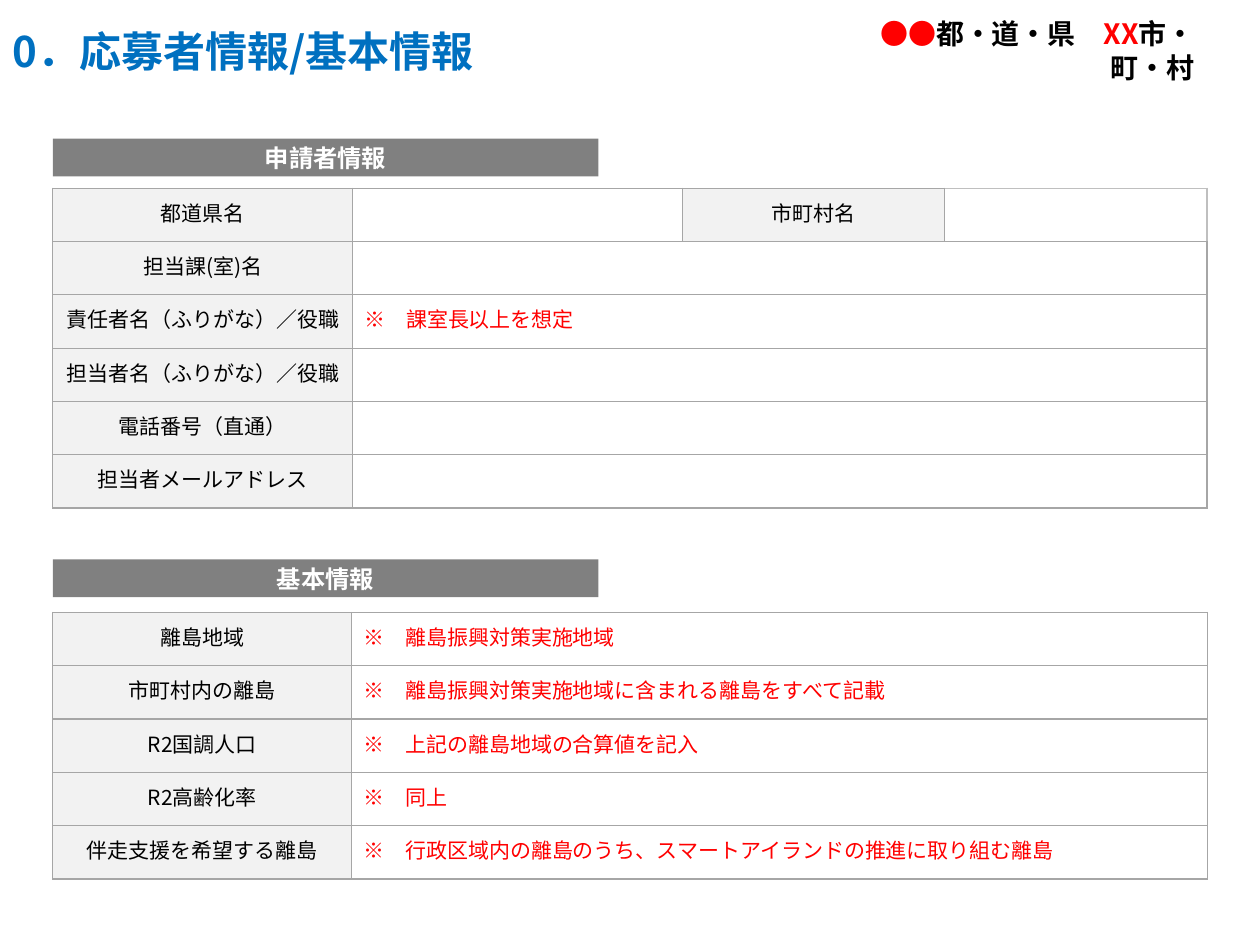
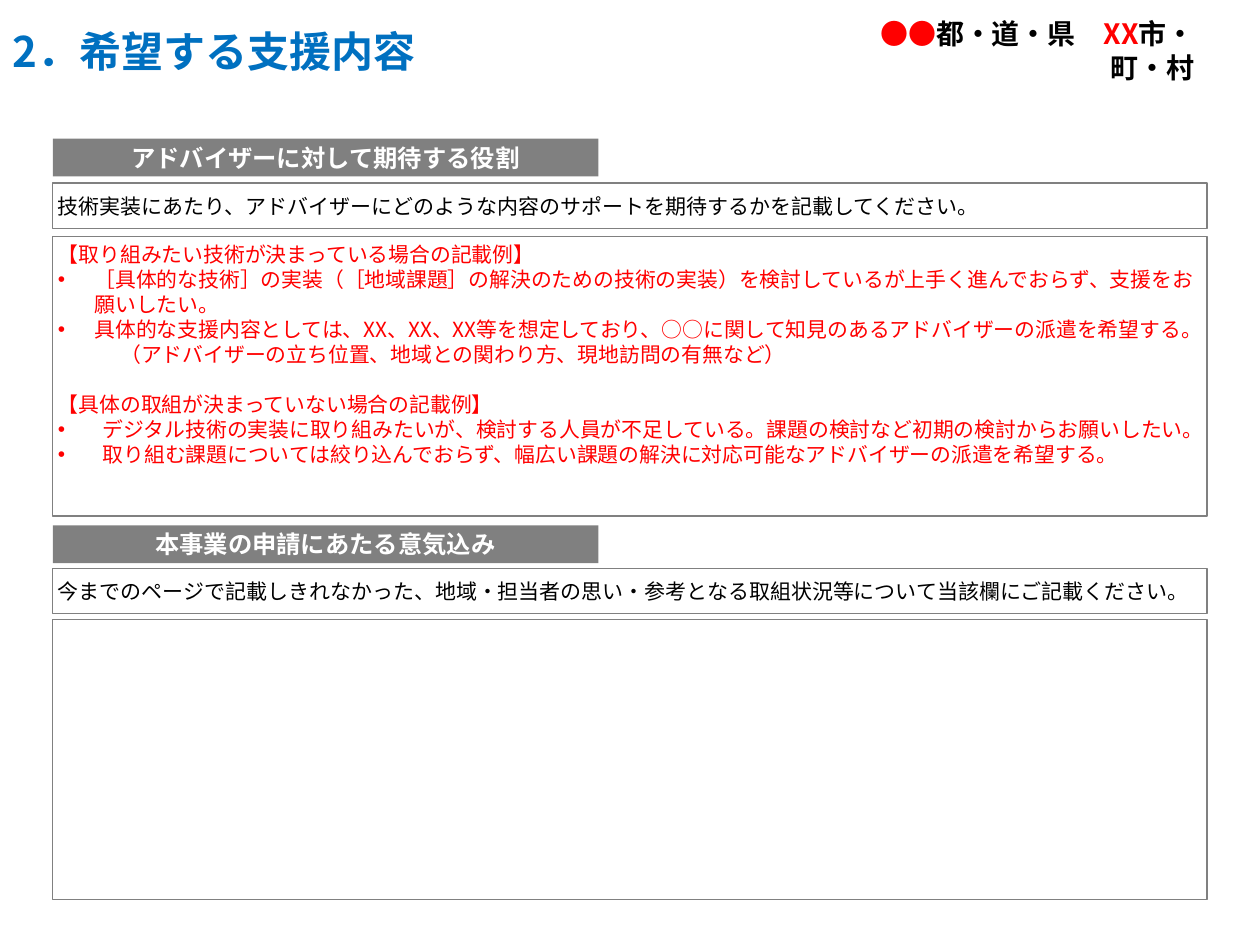
from dataclasses import dataclass

from lxml import etree
from pptx import Presentation
from pptx.dml.color import RGBColor
from pptx.enum.shapes import MSO_SHAPE
from pptx.enum.text import MSO_ANCHOR, MSO_AUTO_SIZE, PP_ALIGN
from pptx.oxml.ns import qn
from pptx.util import Pt

RECT = MSO_SHAPE.RECTANGLE
TOP, MIDDLE = MSO_ANCHOR.TOP, MSO_ANCHOR.MIDDLE
LEFT, CENTER, RIGHT, JUSTIFY = PP_ALIGN.LEFT, PP_ALIGN.CENTER, PP_ALIGN.RIGHT, PP_ALIGN.JUSTIFY
NO_AUTOFIT = MSO_AUTO_SIZE.NONE

FONT = "Noto Sans CJK JP"
COLORS = {
    "title": "0070C0", "band": "808080", "label": "F2F2F2", "grid": "A6A6A6",
    "pale_grid": "BFBFBF", "note": "FF0000", "text": "000000", "white": "FFFFFF",
}
MARGIN = 30.2
CONTENT_WIDTH = 659.6
ROW_HEIGHT = 30.5
LINE_RATIO = 1.2


@dataclass
class Line:
    """A paragraph with its own indent, bullet or space before."""
    text: str
    indent: float = 0
    bullet: bool = False
    before: float = 0


def rgb(name):
    """Return the palette colour of that name."""
    return RGBColor.from_string(COLORS[name])


def indent_paragraph(paragraph, line):
    """Set the left indent and, where asked, a hanging bullet."""
    properties = paragraph._p.get_or_add_pPr()
    properties.set("marL", str(Pt(line.indent)))
    properties.set("indent", str(-Pt(line.indent) if line.bullet else 0))
    if line.bullet:
        etree.SubElement(properties, qn("a:buFont")).set("typeface", "Arial")
        etree.SubElement(properties, qn("a:buChar")).set("char", "•")


def write(frame, lines, size=12, color="text", bold=False, align=LEFT,
          anchor=MIDDLE, insets=(7.2, 3.6)):
    """Fill a text frame; a line is a string, a Line or a list of (text, colour) runs."""
    frame.word_wrap = True
    frame.vertical_anchor = anchor
    frame.margin_left = frame.margin_right = Pt(insets[0])
    frame.margin_top = frame.margin_bottom = Pt(insets[1])
    for index, line in enumerate(lines):
        paragraph = frame.add_paragraph() if index else frame.paragraphs[0]
        runs = line
        if isinstance(line, str):
            runs = [(line, color)]
        elif isinstance(line, Line):
            indent_paragraph(paragraph, line)
            paragraph.space_before = Pt(line.before)
            runs = [(line.text, color)]
        paragraph.alignment = align
        paragraph.line_spacing = Pt(round(size * LINE_RATIO, 1))
        paragraph.font.size = Pt(size)
        for text, run_color in runs:
            run = paragraph.add_run()
            run.text = text
            run.font.size, run.font.bold, run.font.name = Pt(size), bold, FONT
            run.font.color.rgb = rgb(run_color)
            etree.SubElement(run._r.get_or_add_rPr(), qn("a:ea")).set("typeface", FONT)


def border_cell(cell, colors):
    """Draw the left, right, top and bottom borders of a cell."""
    properties = cell._tc.get_or_add_tcPr()
    for side, color in zip("LRTB", colors):
        edge = etree.SubElement(properties, qn(f"a:ln{side}"), w=str(Pt(0.75)))
        fill = etree.SubElement(edge, qn("a:solidFill"))
        etree.SubElement(fill, qn("a:srgbClr")).set("val", COLORS[color])


class Form:
    """Application form in one style, drawn on its current slide."""

    def __init__(self):
        self.deck = Presentation()
        self.deck.slide_width, self.deck.slide_height = Pt(720), Pt(540)
        self.slide = None

    def page(self, heading):
        """Start a slide with its title and the municipality line."""
        self.slide = self.deck.slides.add_slide(self.deck.slide_layouts[5])
        title = self.slide.shapes.title
        title.left, title.top, title.width, title.height = Pt(0), Pt(10.8), Pt(361.4), Pt(36)
        title.text_frame.auto_size = NO_AUTOFIT
        write(title.text_frame, [heading], size=24, color="title", bold=True, anchor=TOP)
        municipality = self.slide.shapes.add_textbox(Pt(472.3), Pt(15.1), Pt(217.4), Pt(27.4))
        write(municipality.text_frame,
              [[("●●", "note"), ("都・道・県\u3000".replace("\u3000", "　"), "text"),
                ("XX", "note"), ("市・町・村", "text")]],
              size=16, bold=True, align=RIGHT, insets=(7.2, 2.9))

    def rectangle(self, top, width, height, fill=None, line=None):
        """Add a plain rectangle at the left margin."""
        shape = self.slide.shapes.add_shape(RECT, Pt(MARGIN), Pt(top), Pt(width), Pt(height))
        shape.shadow.inherit = False
        if fill:
            shape.fill.solid()
            shape.fill.fore_color.rgb = rgb(fill)
        else:
            shape.fill.background()
        if line:
            shape.line.color.rgb = rgb(line)
            shape.line.width = Pt(0.75)
        else:
            shape.line.fill.background()
        return shape

    def band(self, top, caption):
        """Add a grey section heading."""
        shape = self.rectangle(top, 311.8, 21.6, fill="band")
        write(shape.text_frame, [caption], size=13.9, color="white", bold=True, align=CENTER)

    def box(self, top, height, lines=(), **text_format):
        """Add an outlined field."""
        shape = self.rectangle(top, CONTENT_WIDTH, height, line="band")
        write(shape.text_frame, lines, insets=(2.9, 2.9), **text_format)

    def table(self, top, widths, rows):
        """Add a form table; short rows merge their last cell to the right edge."""
        frame = self.slide.shapes.add_table(
            len(rows), len(widths), Pt(MARGIN), Pt(top),
            Pt(sum(widths)), Pt(ROW_HEIGHT * len(rows)))
        grid = frame.table
        grid.first_row = grid.horz_banding = False
        for column, width in zip(grid.columns, widths):
            column.width = Pt(width)
        last = len(widths) - 1
        for r, entries in enumerate(rows):
            grid.rows[r].height = Pt(ROW_HEIGHT)
            for c in range(len(widths)):
                cell = grid.cell(r, c)
                text = entries[c] if c < len(entries) else ""
                is_label = c % 2 == 0 and c < len(entries)
                pale = c == 3 and len(entries) == 4
                border_cell(cell, ["grid", "pale_grid", "pale_grid", "grid"] if pale
                            else ["grid"] * 4)
                cell.fill.solid()
                cell.fill.fore_color.rgb = rgb("label" if is_label else "white")
                cell.vertical_anchor = MIDDLE
                write_cell(cell, text, is_label, 3.6 if c == 0 else 6.5)
            if len(entries) <= last:
                grid.cell(r, len(entries) - 1).merge(grid.cell(r, last))


def write_cell(cell, text, is_label, side_inset):
    """Write a label or a red note, or leave an empty field."""
    write(cell.text_frame, [[(text, "text" if is_label else "note")] if text else []],
          align=CENTER if is_label else LEFT)
    cell.margin_left = cell.margin_right = Pt(side_inset)
    cell.margin_top = cell.margin_bottom = Pt(0 if side_inset < 6 else 3.6)
    cell.vertical_anchor = MIDDLE


def applicant_page(form):
    """Build the applicant and basic information page."""
    form.page("0．応募者情報/基本情報")
    form.band(79.2, "申請者情報")
    form.table(107.5, [171.4, 188.6, 149.8, 149.8], [
        ["都道県名", "", "市町村名", ""],
        ["担当課(室)名", ""],
        ["責任者名（ふりがな）／役職", "※　課室長以上を想定"],
        ["担当者名（ふりがな）／役職", ""],
        ["電話番号（直通）", ""],
        ["担当者メールアドレス", ""],
    ])
    form.band(319.7, "基本情報")
    form.table(349.9, [170.9, 488.7], [
        ["離島地域", "※　離島振興対策実施地域"],
        ["市町村内の離島", "※　離島振興対策実施地域に含まれる離島をすべて記載"],
        ["R2国調人口", "※　上記の離島地域の合算値を記入"],
        ["R2高齢化率", "※　同上"],
        ["伴走支援を希望する離島",
         "※　行政区域内の離島のうち、スマートアイランドの推進に取り組む離島"],
    ])


def support_page(form):
    """Build the requested support page."""
    form.page("2．希望する支援内容")
    form.band(79.2, "アドバイザーに対して期待する役割")
    form.box(104.6, 26, [
        "技術実装にあたり、アドバイザーにどのような内容のサポートを期待するかを記載してください。",
    ], align=JUSTIFY)
    form.box(135, 159.8, [
        "【取り組みたい技術が決まっている場合の記載例】",
        Line("［具体的な技術］の実装（［地域課題］の解決のための技術の実装）を検討しているが"
             "上手く進んでおらず、支援をお願いしたい。", 20.9, True),
        Line("具体的な支援内容としては、XX、XX、XX等を想定しており、○○に関して知見のある"
             "アドバイザーの派遣を希望する。", 20.9, True),
        Line("（アドバイザーの立ち位置、地域との関わり方、現地訪問の有無など）", 35.7),
        Line("【具体の取組が決まっていない場合の記載例】", before=14.3),
        Line("　デジタル技術の実装に取り組みたいが、検討する人員が不足している。"
             "課題の検討など初期の検討からお願いしたい。", 13.7, True),
        Line("　取り組む課題については絞り込んでおらず、幅広い課題の解決に対応可能な"
             "アドバイザーの派遣を希望する。", 13.7, True),
    ], size=11.9, color="note", anchor=TOP)
    form.band(300.2, "本事業の申請にあたる意気込み")
    form.box(325, 25.6, [
        "今までのページで記載しきれなかった、地域・担当者の思い・参考となる取組状況等について"
        "当該欄にご記載ください。",
    ], align=JUSTIFY)
    form.box(354.2, 159.8)


def main():
    """Build the form and save it."""
    form = Form()
    applicant_page(form)
    support_page(form)
    form.deck.save("out.pptx")


if __name__ == "__main__":
    main()
